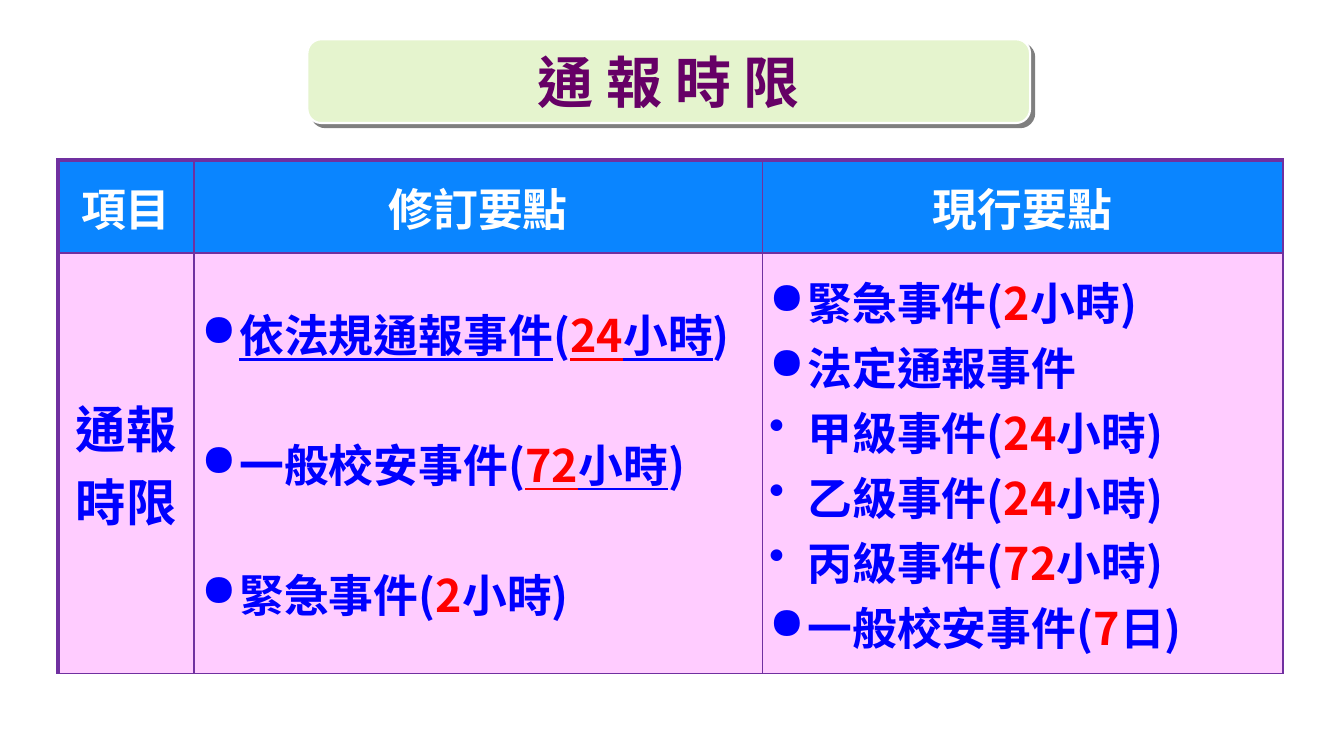
from dataclasses import dataclass

from lxml import etree
from pptx import Presentation
from pptx.dml.color import RGBColor
from pptx.enum.lang import MSO_LANGUAGE_ID
from pptx.enum.shapes import MSO_SHAPE
from pptx.enum.text import MSO_ANCHOR, PP_ALIGN
from pptx.oxml.ns import qn
from pptx.util import Pt

ROUNDED = MSO_SHAPE.ROUNDED_RECTANGLE
CENTER, LEFT = PP_ALIGN.CENTER, PP_ALIGN.LEFT
MIDDLE = MSO_ANCHOR.MIDDLE
CHINESE = MSO_LANGUAGE_ID.TRADITIONAL_CHINESE


@dataclass(frozen=True)
class Theme:
    font: str = "Noto Sans CJK SC"
    white: str = "FFFFFF"
    banner: str = "E5F4CE"
    title: str = "660066"
    header: str = "0A85FF"
    body: str = "FFCCFF"
    text: str = "0000FF"
    limit: str = "FF0000"
    border: str = "7030A0"
    shadow: str = "000000"
    title_size: int = 40
    label_size: int = 36
    text_size: int = 32
    thick: float = 3
    thin: float = 1
    indent: float = 27.36
    blank_line: float = 46.3


@dataclass(frozen=True)
class Span:
    text: str
    color: str
    underline: bool = False


@dataclass(frozen=True)
class Item:
    spans: tuple
    bullet: str = "●"
    gap: float = 0


THEME = Theme()


def timed(event, number, unit, bullet="●", gap=0, marked=False):
    """An event with its time limit; marked underlines the limit."""
    spans = [Span(f"{event}(", THEME.text), Span(number, THEME.limit, marked)]
    if marked:
        spans += [Span(unit, THEME.text, True), Span(")", THEME.text)]
    else:
        spans.append(Span(f"{unit})", THEME.text))
    return Item(tuple(spans), bullet, gap)


REVISED = [
    Item((Span("依法規通報事件", THEME.text, True), *timed("", "24", "小時", marked=True).spans)),
    timed("一般校安事件", "72", "小時", gap=THEME.blank_line, marked=True),
    timed("緊急事件", "2", "小時", gap=THEME.blank_line),
]
CURRENT = [
    timed("緊急事件", "2", "小時"),
    Item((Span("法定通報事件", THEME.text),)),
    *(timed(f"{grade}級事件", hours, "小時", "•")
      for grade, hours in (("甲", "24"), ("乙", "24"), ("丙", "72"))),
    timed("一般校安事件", "7", "日"),
]


def set_formats(target, formats):
    for name, value in formats.items():
        setattr(target, name, value)


def add_color(parent, color):
    fill = etree.SubElement(parent, qn("a:solidFill"))
    etree.SubElement(fill, qn("a:srgbClr"), val=color)


class SlideBuilder:
    def __init__(self, page, theme):
        self.page = page
        self.theme = theme

    def add_spans(self, para, spans, size, align=LEFT):
        para.alignment = align
        for span in spans:
            run = para.add_run()
            run.text = span.text
            set_formats(run.font, {
                "name": self.theme.font, "size": Pt(size), "bold": True,
                "underline": span.underline, "language_id": CHINESE,
            })
            run.font.color.rgb = RGBColor.from_string(span.color)
            latin = run.font._element.find(qn("a:latin"))
            latin.addnext(etree.Element(qn("a:ea"), typeface=self.theme.font))

    def bullet_list(self, frame, items):
        for index, item in enumerate(items):
            para = frame.add_paragraph() if index else frame.paragraphs[0]
            self.add_spans(para, item.spans, self.theme.text_size)
            para.space_before = Pt(item.gap)
            properties = para._p.get_or_add_pPr()
            properties.set("marL", str(Pt(self.theme.indent)))
            properties.set("indent", str(-Pt(self.theme.indent)))
            etree.SubElement(properties, qn("a:buChar"), char=item.bullet)

    def banner(self, text, left, top, width, height):
        box = self.page.shapes.add_shape(ROUNDED, Pt(left), Pt(top), Pt(width), Pt(height))
        box.fill.solid()
        box.fill.fore_color.rgb = RGBColor.from_string(self.theme.banner)
        box.line.color.rgb = RGBColor.from_string(self.theme.white)
        box.line.width = Pt(1.5)
        self.drop_shadow(box)
        set_formats(box.text_frame, {"vertical_anchor": MIDDLE, "word_wrap": True})
        spans = [Span(text, self.theme.title)]
        self.add_spans(box.text_frame.paragraphs[0], spans, self.theme.title_size, CENTER)

    def drop_shadow(self, box):
        box.shadow.inherit = False
        effects = box._element.spPr.find(qn("a:effectLst"))
        shadow = etree.SubElement(effects, qn("a:outerShdw"), blurRad="0",
                                  dist=str(Pt(4.2)), dir="2700000", algn="ctr", rotWithShape="0")
        color = etree.SubElement(shadow, qn("a:srgbClr"), val=self.theme.shadow)
        etree.SubElement(color, qn("a:alpha"), val="50000")

    def table(self, left, top, widths, heights):
        frame = self.page.shapes.add_table(len(heights), len(widths), Pt(left), Pt(top),
                                           Pt(sum(widths)), Pt(sum(heights)))
        table = frame.table
        set_formats(table, {"first_row": False, "horz_banding": False})
        for column, width in zip(table.columns, widths):
            column.width = Pt(width)
        for row, height in zip(table.rows, heights):
            row.height = Pt(height)
        for row in range(len(heights)):
            for column in range(len(widths)):
                self.style_cell(table.cell(row, column), row, column)
        return table

    def style_cell(self, cell, row, column):
        theme = self.theme
        listed = row > 0 and column > 0
        side, edge = (5.04, 0) if listed else (7.2, 3.6)
        set_formats(cell, {
            "vertical_anchor": MIDDLE, "margin_left": Pt(side), "margin_right": Pt(side),
            "margin_top": Pt(edge), "margin_bottom": Pt(edge),
        })
        cell.fill.solid()
        cell.fill.fore_color.rgb = RGBColor.from_string(theme.body if row else theme.header)
        borders = {
            "lnL": theme.thin if column else theme.thick,
            "lnR": theme.thin,
            "lnT": theme.thin if row else theme.thick,
            "lnB": theme.thin,
        }
        properties = cell._tc.get_or_add_tcPr()
        for position, (name, width) in enumerate(borders.items()):
            line = etree.Element(qn(f"a:{name}"), w=str(Pt(width)))
            add_color(line, theme.border)
            properties.insert(position, line)

    def label(self, cell, text, color, size):
        self.add_spans(cell.text_frame.paragraphs[0], [Span(text, color)], size, CENTER)


def main():
    deck = Presentation()
    set_formats(deck, {"slide_width": Pt(960), "slide_height": Pt(540)})
    builder = SlideBuilder(deck.slides.add_slide(deck.slide_layouts[6]), THEME)

    builder.banner("通 報 時 限", 219.6, 28.1, 516.2, 59.8)
    table = builder.table(41.4, 114.5, (97.2, 405.8, 372), (66.2, 300.2))
    for column, heading in enumerate(("項目", "修訂要點", "現行要點")):
        builder.label(table.cell(0, column), heading, THEME.white, THEME.text_size)
    builder.label(table.cell(1, 0), "通報時限", THEME.text, THEME.label_size)
    for column, items in enumerate((REVISED, CURRENT), start=1):
        builder.bullet_list(table.cell(1, column).text_frame, items)

    deck.save("out.pptx")


if __name__ == "__main__":
    main()
